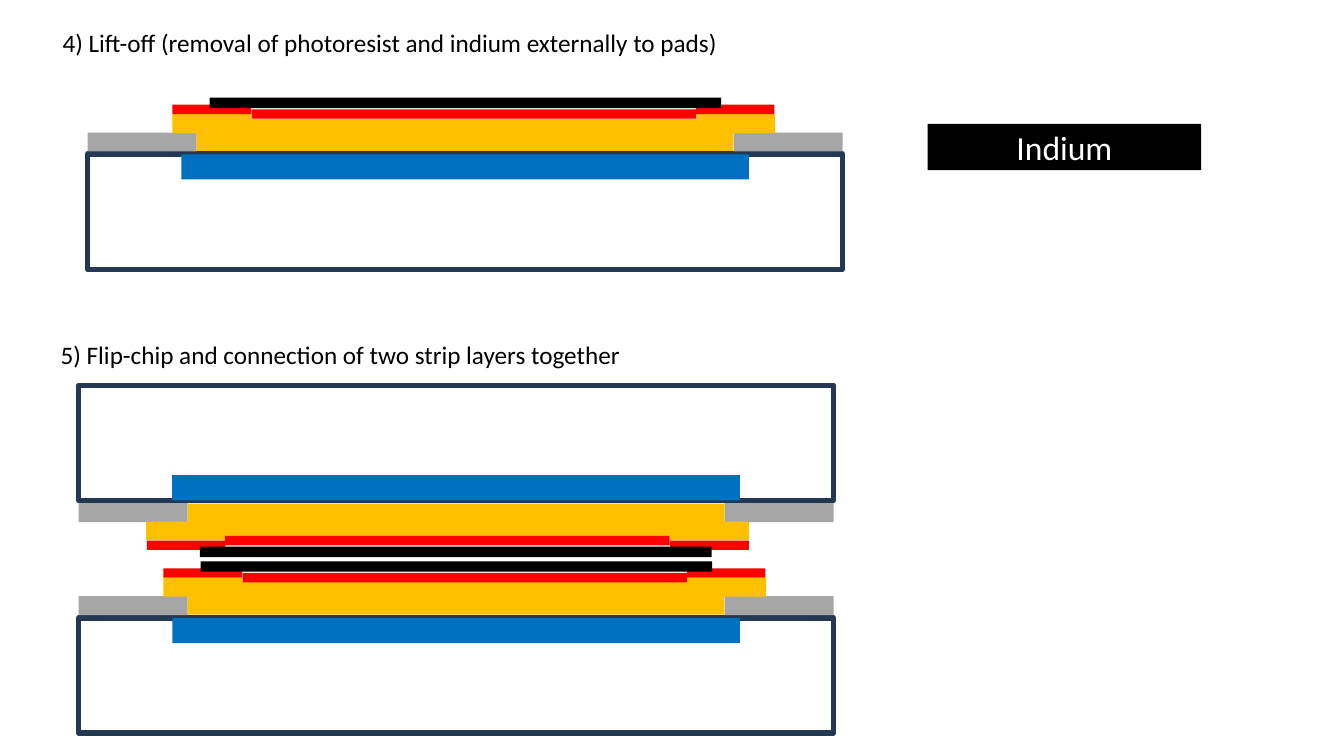
from dataclasses import dataclass

from pptx import Presentation
from pptx.dml.color import RGBColor
from pptx.enum.shapes import MSO_SHAPE
from pptx.enum.text import MSO_ANCHOR, MSO_AUTO_SIZE, PP_ALIGN
from pptx.shapes.autoshape import Shape
from pptx.shapes.shapetree import GroupShapes, SlideShapes
from pptx.util import Pt

RECTANGLE = MSO_SHAPE.RECTANGLE
MIDDLE = MSO_ANCHOR.MIDDLE
FIT_SHAPE = MSO_AUTO_SIZE.SHAPE_TO_FIT_TEXT
CENTER = PP_ALIGN.CENTER

NAVY = RGBColor(0x23, 0x39, 0x53)
BLUE = RGBColor(0x00, 0x70, 0xC0)
GRAY = RGBColor(0xA6, 0xA6, 0xA6)
GOLD = RGBColor(0xFF, 0xC0, 0x00)
RED = RGBColor(0xFF, 0x00, 0x00)
BLACK = RGBColor(0x00, 0x00, 0x00)
WHITE = RGBColor(0xFF, 0xFF, 0xFF)

FONT = "Calibri"
WAFER_WIDTH, WAFER_HEIGHT = 539.2, 82.2


@dataclass(frozen=True)
class Layer:
    """A rectangle placed from the wafer's top left corner, in points."""
    left: float
    top: float
    width: float
    height: float
    color: RGBColor


@dataclass(frozen=True)
class Chip:
    """A layer stack; a flipped one is turned by 180 degrees."""
    left: float
    top: float
    flipped: bool = False


@dataclass(frozen=True)
class Caption:
    left: float
    top: float
    width: float
    text: str


# Layers from back to front
LAYERS = [
    Layer(67, 0, 405.4, 18, BLUE),
    Layer(0, -15.5, 77.8, 13.5, GRAY),
    Layer(461.4, -15.5, 77.8, 13.5, GRAY),
    Layer(77.8, -25.5, 383.4, 23.2, GOLD),
    Layer(434.8, -28.6, 56.2, 13.5, GOLD),
    Layer(60.5, -28.6, 56.2, 13.5, GOLD),
    Layer(60.5, -35.4, 56.2, 6.7, RED),
    Layer(434.4, -35.4, 56.2, 6.7, RED),
    Layer(117.1, -32.1, 317.5, 6.7, RED),
    Layer(87.1, -40.5, 365.5, 7.5, BLACK),
]

SINGLE_CHIP = Chip(62.6, 110.2)
BONDED_CHIPS = [Chip(56.2, 441.4), Chip(56.2, 275.2, flipped=True)]

CAPTIONS = [
    Caption(37.6, 16.2, 488.6,
            "4) Lift-off (removal of photoresist and indium externally to pads)"),
    Caption(36.2, 238.6, 419,
            "5) Flip-chip and connection of two strip layers together"),
]


def add_rectangle(shapes: SlideShapes | GroupShapes, left: float, top: float,
                  width: float, height: float) -> Shape:
    shape = shapes.add_shape(RECTANGLE, Pt(left), Pt(top), Pt(width), Pt(height))
    shape.shadow.inherit = False
    return shape


def add_filled(shapes: SlideShapes | GroupShapes, left: float, top: float,
               width: float, height: float, color: RGBColor) -> Shape:
    shape = add_rectangle(shapes, left, top, width, height)
    shape.fill.solid()
    shape.fill.fore_color.rgb = color
    shape.line.fill.background()
    return shape


def add_chip(shapes: SlideShapes | GroupShapes, chip: Chip) -> None:
    rotation = 180 if chip.flipped else 0
    wafer = add_rectangle(shapes, chip.left, chip.top, WAFER_WIDTH, WAFER_HEIGHT)
    wafer.fill.background()
    wafer.line.color.rgb = NAVY
    wafer.line.width = Pt(4)
    wafer.rotation = rotation
    for layer in LAYERS:
        left, top = layer.left, layer.top
        if chip.flipped:
            left = WAFER_WIDTH - left - layer.width
            top = WAFER_HEIGHT - top - layer.height
        shape = add_filled(shapes, chip.left + left, chip.top + top,
                           layer.width, layer.height, layer.color)
        shape.rotation = rotation


def add_caption(shapes: SlideShapes, caption: Caption) -> None:
    box = shapes.add_textbox(Pt(caption.left), Pt(caption.top),
                             Pt(caption.width), Pt(29))
    frame = box.text_frame
    frame.word_wrap = False
    frame.auto_size = FIT_SHAPE
    paragraph = frame.paragraphs[0]
    paragraph.text = caption.text
    paragraph.font.name = FONT
    paragraph.font.size = Pt(18)
    paragraph.font.color.rgb = BLACK


def add_legend(shapes: SlideShapes) -> None:
    legend = add_filled(shapes, 662.6, 88.5, 195.4, 33, BLACK)
    frame = legend.text_frame
    frame.vertical_anchor = MIDDLE
    paragraph = frame.paragraphs[0]
    paragraph.text = "Indium"
    paragraph.alignment = CENTER
    paragraph.font.name = FONT
    paragraph.font.size = Pt(24)
    paragraph.font.color.rgb = WHITE


def main() -> None:
    presentation = Presentation()
    presentation.slide_width = Pt(960)
    presentation.slide_height = Pt(540)
    slide = presentation.slides.add_slide(presentation.slide_layouts[6])

    # Step 4: one chip and the legend
    add_chip(slide.shapes, SINGLE_CHIP)
    add_legend(slide.shapes)

    # Step 5: two chips facing each other
    bonded_pair = slide.shapes.add_group_shape()
    for chip in BONDED_CHIPS:
        add_chip(bonded_pair.shapes, chip)

    # Step captions
    for caption in CAPTIONS:
        add_caption(slide.shapes, caption)

    presentation.save("out.pptx")


if __name__ == "__main__":
    main()
